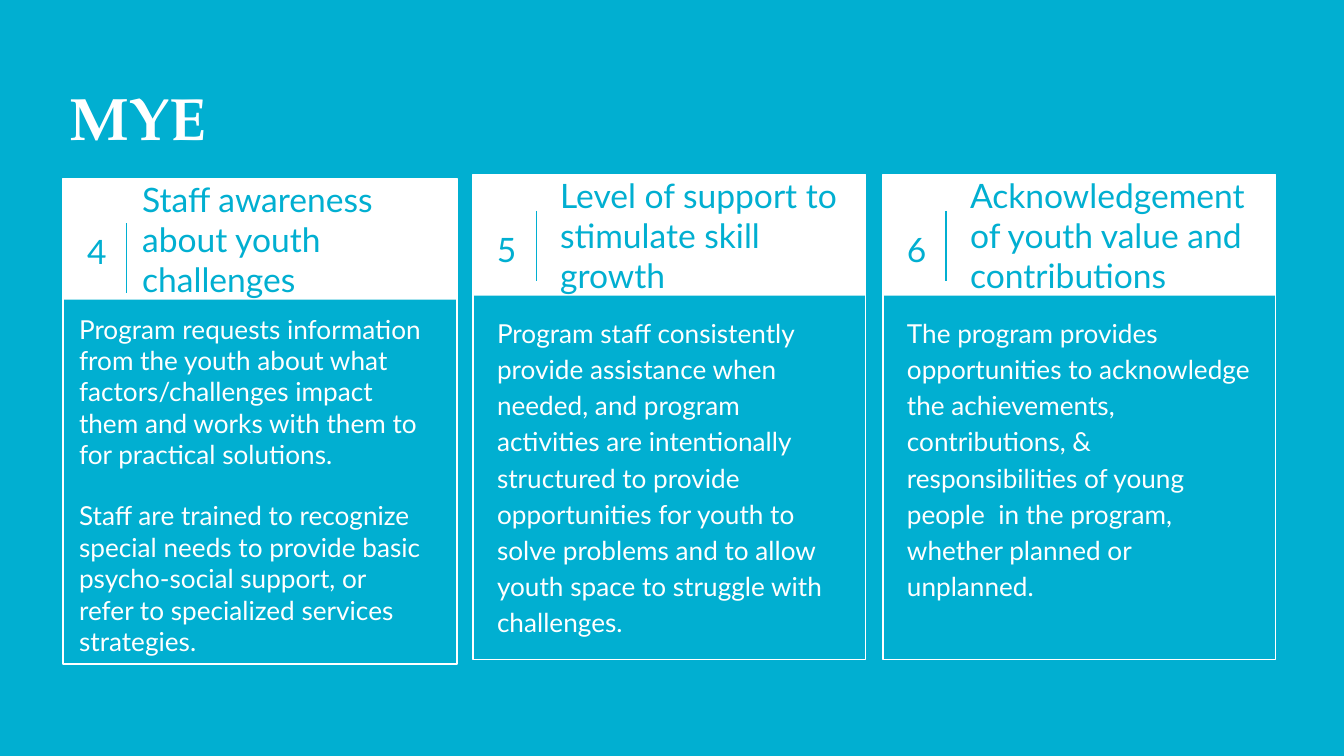
from lxml import etree
from pptx import Presentation
from pptx.dml.color import RGBColor
from pptx.enum.shapes import MSO_CONNECTOR, MSO_SHAPE
from pptx.enum.text import MSO_ANCHOR, PP_ALIGN
from pptx.oxml.ns import qn
from pptx.util import Inches, Pt

RECT = MSO_SHAPE.RECTANGLE
STRAIGHT = MSO_CONNECTOR.STRAIGHT
TOP, MIDDLE = MSO_ANCHOR.TOP, MSO_ANCHOR.MIDDLE
LEFT, CENTER = PP_ALIGN.LEFT, PP_ALIGN.CENTER

COLORS = {"teal": "01AFD1", "white": "FFFFFF"}
SLIDE_W = 10
SLIDE_H = SLIDE_W * 9 / 16
CARD_H, HEADER_H = 3.61, 0.9
CARD_LEFT, CARD_STEP = 0.47, 3.05

# Card width, and offsets inside it: number (top, height), rule (top),
# heading (left), body (left, top)
TIGHT = {"width": 2.93, "number": (0, 1.03), "rule": 0.33, "heading": 0.49,
         "body": (0.02, 0.9), "spacing": 1.0, "before": 16}
LOOSE = {"width": 2.92, "number": (0.08, 0.9), "rule": 0.27, "heading": 0.55,
         "body": (0.08, 0.93), "spacing": 1.15, "before": 0}

CARDS = [
    (1.33, TIGHT, "4", "Staff awareness about youth challenges", [
        "Program requests information from the youth about what factors/challenges "
        "impact them and works with them to for practical solutions.",
        "Staff are trained to recognize special needs to provide basic psycho-social "
        "support, or refer to specialized services strategies."]),
    (1.3, LOOSE, "5", "Level of support to stimulate skill growth", [
        "Program staff consistently provide assistance when needed, and program "
        "activities are intentionally structured to provide opportunities for youth "
        "to solve problems and to allow youth space to struggle with challenges."]),
    (1.3, LOOSE, "6", "Acknowledgement of youth value and contributions", [
        "The program provides opportunities to acknowledge the achievements, "
        "contributions, & responsibilities of young people  in the program, "
        "whether planned or unplanned."]),
]


def rgb(name):
    return RGBColor.from_string(COLORS[name])


def add_text(s, box, paragraphs, size, color, font="Lato", bold=False,
             anchor=TOP, align=LEFT, spacing=1.0, before=0):
    """Add a text box; `before` is the gap above every paragraph but the first."""
    tf = s.shapes.add_textbox(*map(Inches, box)).text_frame
    tf.word_wrap = True
    tf.vertical_anchor = anchor
    tf.margin_left = tf.margin_right = tf.margin_top = tf.margin_bottom = Inches(0.1)
    for i, text in enumerate(paragraphs):
        p = tf.add_paragraph() if i else tf.paragraphs[0]
        p.text = text
        p.alignment = align
        p.line_spacing = spacing
        p.space_before = Pt(before if i else 0)
        p.font.name, p.font.size, p.font.bold = font, Pt(size), bold
        p.font.color.rgb = rgb(color)


def add_rect(s, box, filled):
    """Add a white rectangle, either filled or outlined."""
    sp = s.shapes.add_shape(RECT, *map(Inches, box))
    sp.shadow.inherit = False
    if filled:
        sp.fill.solid()
        sp.fill.fore_color.rgb = rgb("white")
        sp.line.fill.background()
    else:
        sp.fill.background()
        sp.line.color.rgb = rgb("white")
        sp.line.width = Pt(0.75)


def add_rule(s, x, y, height):
    line = s.shapes.add_connector(STRAIGHT, *map(Inches, (x, y, x, y + height)))
    line.line.color.rgb = rgb("teal")
    line.line.width = Pt(0.75)
    etree.SubElement(line._element.spPr, qn("a:effectLst"))


def add_card(s, x, y, layout, number, heading, body):
    add_rect(s, (x, y, layout["width"], CARD_H), filled=False)
    add_rect(s, (x, y, layout["width"], HEADER_H), filled=True)
    number_y, number_h = layout["number"]
    add_text(s, (x + 0.06, y + number_y, 0.38, number_h), [number], 18, "teal",
             anchor=MIDDLE, align=CENTER, spacing=1.15)
    add_rule(s, x + 0.47, y + layout["rule"], 0.52)
    add_text(s, (x + layout["heading"], y, 2.3, HEADER_H), [heading], 18, "teal",
             anchor=MIDDLE)
    body_x, body_y = layout["body"]
    add_text(s, (x + body_x, y + body_y, 2.77, 2.6), body, 14, "white",
             spacing=layout["spacing"], before=layout["before"])


def main():
    prs = Presentation()
    prs.slide_width, prs.slide_height = Inches(SLIDE_W), Inches(SLIDE_H)
    s = prs.slides.add_slide(prs.slide_layouts[6])
    s.background.fill.solid()
    s.background.fill.fore_color.rgb = rgb("teal")
    add_text(s, (0.42, 0.5, 9.15, 0.75), ["MYE"], 32, "white",
             font="TeX Gyre Pagella", bold=True)
    for i, (y, *content) in enumerate(CARDS):
        add_card(s, CARD_LEFT + i * CARD_STEP, y, *content)
    prs.save("out.pptx")


if __name__ == "__main__":
    main()
